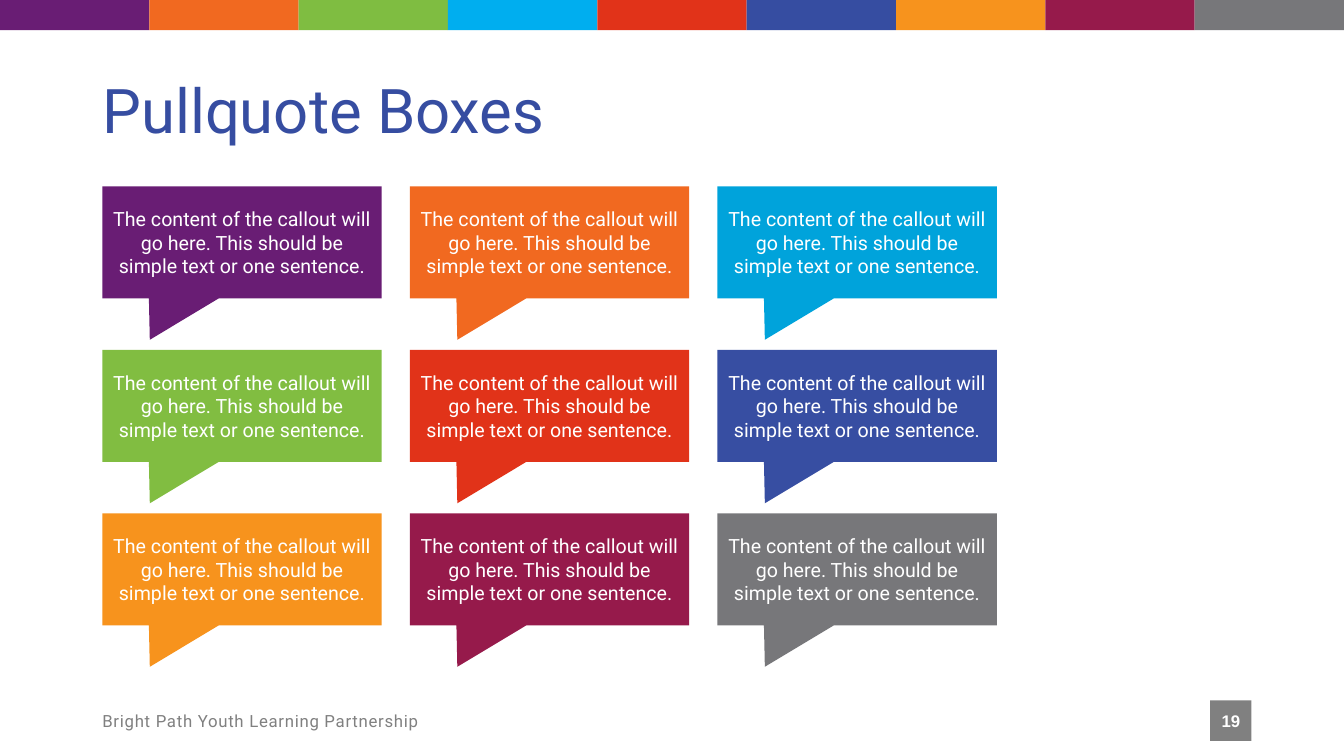
from dataclasses import dataclass

from pptx import Presentation
from pptx.dml.color import RGBColor
from pptx.enum.shapes import MSO_SHAPE
from pptx.enum.text import MSO_ANCHOR, PP_ALIGN
from pptx.shapes.autoshape import Shape
from pptx.slide import Slide
from pptx.util import Cm, Pt

COLORS = {
    "purple": "691D74",
    "orange": "F16920",
    "band_green": "7FBD41",
    "green": "81BD41",
    "band_cyan": "00AEEF",
    "cyan": "00A3DB",
    "red": "E13319",
    "blue": "364DA1",
    "callout_blue": "374EA2",
    "amber": "F7931D",
    "maroon": "961A4B",
    "gray": "77777A",
    "footer_gray": "808080",
    "white": "FFFFFF",
}
BAND = ["purple", "orange", "band_green", "band_cyan", "red",
        "blue", "amber", "maroon", "gray"]
CALLOUT_ROWS = [
    ["purple", "orange", "cyan"],
    ["green", "red", "callout_blue"],
    ["amber", "maroon", "gray"],
]
QUOTE = "The content of the callout will go here. This should be simple text or one sentence."
PAGE_WIDTH = 33.87
CALLOUT_LEFT, CALLOUT_TOP = 2.58, 4.7
COLUMN_PITCH, ROW_PITCH = 7.75, 4.12


@dataclass
class Frame:
    left: float
    top: float
    width: float
    height: float

    def lengths(self) -> tuple[Cm, Cm, Cm, Cm]:
        return Cm(self.left), Cm(self.top), Cm(self.width), Cm(self.height)


@dataclass
class Label:
    text: str
    size: float
    color: str = "white"
    font: str = "Roboto"
    bold: bool = False
    alignment: PP_ALIGN = PP_ALIGN.CENTER
    line_spacing: float = 1.0
    letter_spacing: float = 0


def write_label(box: Shape, label: Label) -> None:
    box.text_frame.word_wrap = True
    box.text_frame.vertical_anchor = MSO_ANCHOR.MIDDLE
    para = box.text_frame.paragraphs[0]
    span = para.add_run()
    span.text = label.text
    para.alignment = label.alignment
    para.line_spacing = label.line_spacing
    para.font.name = label.font
    para.font.size = Pt(label.size)
    para.font.bold = label.bold
    para.font.color.rgb = RGBColor.from_string(COLORS[label.color])
    if label.letter_spacing:
        span.font._element.set("spc", str(round(label.letter_spacing * 100)))


def add_block(page: Slide, frame: Frame, color: str,
              kind: MSO_SHAPE = MSO_SHAPE.RECTANGLE) -> Shape:
    block = page.shapes.add_shape(kind, *frame.lengths())
    block.shadow.inherit = False
    block.fill.solid()
    block.fill.fore_color.rgb = RGBColor.from_string(COLORS[color])
    block.line.fill.background()
    return block


def add_text(page: Slide, frame: Frame, label: Label) -> None:
    write_label(page.shapes.add_textbox(*frame.lengths()), label)


def add_band(page: Slide) -> None:
    width = PAGE_WIDTH / len(BAND)
    for index, color in enumerate(BAND):
        add_block(page, Frame(index * width, 0, width, 0.76), color)


def add_callouts(page: Slide) -> None:
    for row, colors in enumerate(CALLOUT_ROWS):
        for column, color in enumerate(colors):
            frame = Frame(CALLOUT_LEFT + column * COLUMN_PITCH,
                          CALLOUT_TOP + row * ROW_PITCH, 7.04, 2.82)
            callout = add_block(page, frame, color, MSO_SHAPE.RECTANGULAR_CALLOUT)
            callout.adjustments[0] = -0.33
            callout.adjustments[1] = 0.87
            write_label(callout, Label(QUOTE, 14))


def add_footer(page: Slide) -> None:
    add_text(page, Frame(2.33, 17.65, 20.32, 1.02),
             Label("Bright Path Youth Learning Partnership", 12, "footer_gray",
                   alignment=PP_ALIGN.LEFT, letter_spacing=0.5))
    number = add_block(page, Frame(30.5, 17.65, 1.04, 1.02), "footer_gray")
    number.text_frame.margin_left = number.text_frame.margin_right = 0
    write_label(number, Label("19", 12, font="Arial", bold=True))


def main() -> None:
    deck = Presentation()
    deck.slide_width, deck.slide_height = Cm(PAGE_WIDTH), Cm(19.05)
    page = deck.slides.add_slide(deck.slide_layouts[6])
    add_band(page)
    add_text(page, Frame(2.33, 1.02, 29.21, 3.68),
             Label("Pullquote Boxes", 44, "blue",
                   alignment=PP_ALIGN.LEFT, line_spacing=0.9))
    add_callouts(page)
    add_footer(page)
    deck.save("out.pptx")


if __name__ == "__main__":
    main()
